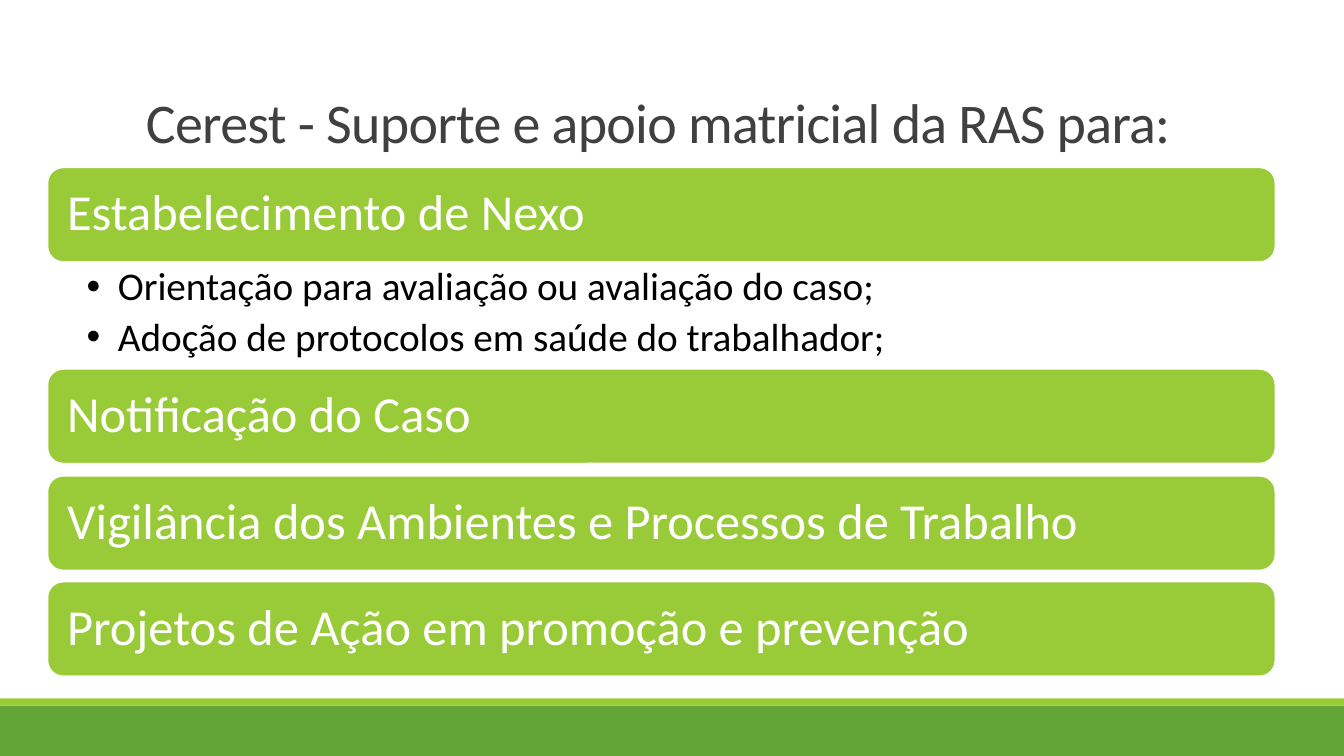
from lxml.etree import SubElement
from pptx import Presentation
from pptx.dml.color import RGBColor
from pptx.enum.shapes import MSO_SHAPE
from pptx.enum.text import MSO_ANCHOR, PP_ALIGN
from pptx.oxml.ns import qn
from pptx.util import Inches, Pt

COLORS = {"green": "63A537", "lime": "99CB38", "white": "FFFFFF",
          "title": "404040", "black": "000000"}
BAR_LEFT, BAR_WIDTH, BAR_HEIGHT = 0.47, 12.18, 0.94

topics = [
    (1.66, "Estabelecimento de Nexo"),
    (3.66, "Notificação do Caso"),
    (4.72, "Vigilância dos Ambientes e Processos de Trabalho"),
    (5.77, "Projetos de Ação em promoção e prevenção"),
]
nexus_actions = [
    "Orientação para avaliação ou avaliação do caso;",
    "Adoção de protocolos em saúde do trabalhador;",
]


def add_block(kind, left, top, width, height, fill):
    block = slide.shapes.add_shape(kind, Inches(left), Inches(top), Inches(width), Inches(height))
    block.shadow.inherit = False
    block.fill.solid()
    block.fill.fore_color.rgb = RGBColor.from_string(COLORS[fill])
    block.line.fill.background()
    return block


def write(paragraph, text, size, color, spacing):
    paragraph.alignment = PP_ALIGN.LEFT
    paragraph.line_spacing = spacing
    run = paragraph.add_run()
    run.text = text
    run.font.name = "Calibri"
    run.font.size = Pt(size)
    run.font.color.rgb = RGBColor.from_string(COLORS[color])
    return run


prs = Presentation()
prs.slide_width, prs.slide_height = Inches(13.33), Inches(7.5)
slide = prs.slides.add_slide(prs.slide_layouts[6])

# Footer bands
add_block(MSO_SHAPE.RECTANGLE, 0, 7, 13.33, 0.5, "green")
add_block(MSO_SHAPE.RECTANGLE, 0, 6.93, 13.33, 0.07, "lime")

# Title
title = slide.shapes.add_textbox(Inches(1.35), Inches(0), Inches(11), Inches(1.59)).text_frame
title.word_wrap = True
title.vertical_anchor = MSO_ANCHOR.BOTTOM
heading = write(title.paragraphs[0], "Cerest - Suporte e apoio matricial da RAS para:",
                40, "title", 0.85)
heading.font._element.set("spc", "-50")

# Topic bars
for top, topic in topics:
    bar = add_block(MSO_SHAPE.ROUNDED_RECTANGLE, BAR_LEFT, top, BAR_WIDTH, BAR_HEIGHT, "lime")
    bar.line.color.rgb = RGBColor.from_string(COLORS["white"])
    bar.line.width = Pt(1.25)
    label = bar.text_frame
    label.word_wrap = True
    label.vertical_anchor = MSO_ANCHOR.MIDDLE
    label.margin_left = label.margin_right = Inches(0.15)
    write(label.paragraphs[0], topic, 36, "white", 0.9)

# Actions under the first topic
actions = slide.shapes.add_textbox(Inches(BAR_LEFT), Inches(2.6),
                                   Inches(BAR_WIDTH), Inches(1.06)).text_frame
actions.word_wrap = True
actions.margin_left, actions.margin_right = Inches(0.39), Inches(0.28)
for i, action in enumerate(nexus_actions):
    paragraph = actions.add_paragraph() if i else actions.paragraphs[0]
    paragraph.space_after = Pt(5.6)
    properties = paragraph._p.get_or_add_pPr()
    properties.set("marL", str(Inches(0.31)))
    properties.set("indent", str(-Inches(0.31)))
    SubElement(properties, qn("a:buFont"), typeface="Arial")
    SubElement(properties, qn("a:buChar"), char="•")
    write(paragraph, action, 28, "black", 0.9)

prs.save("out.pptx")
